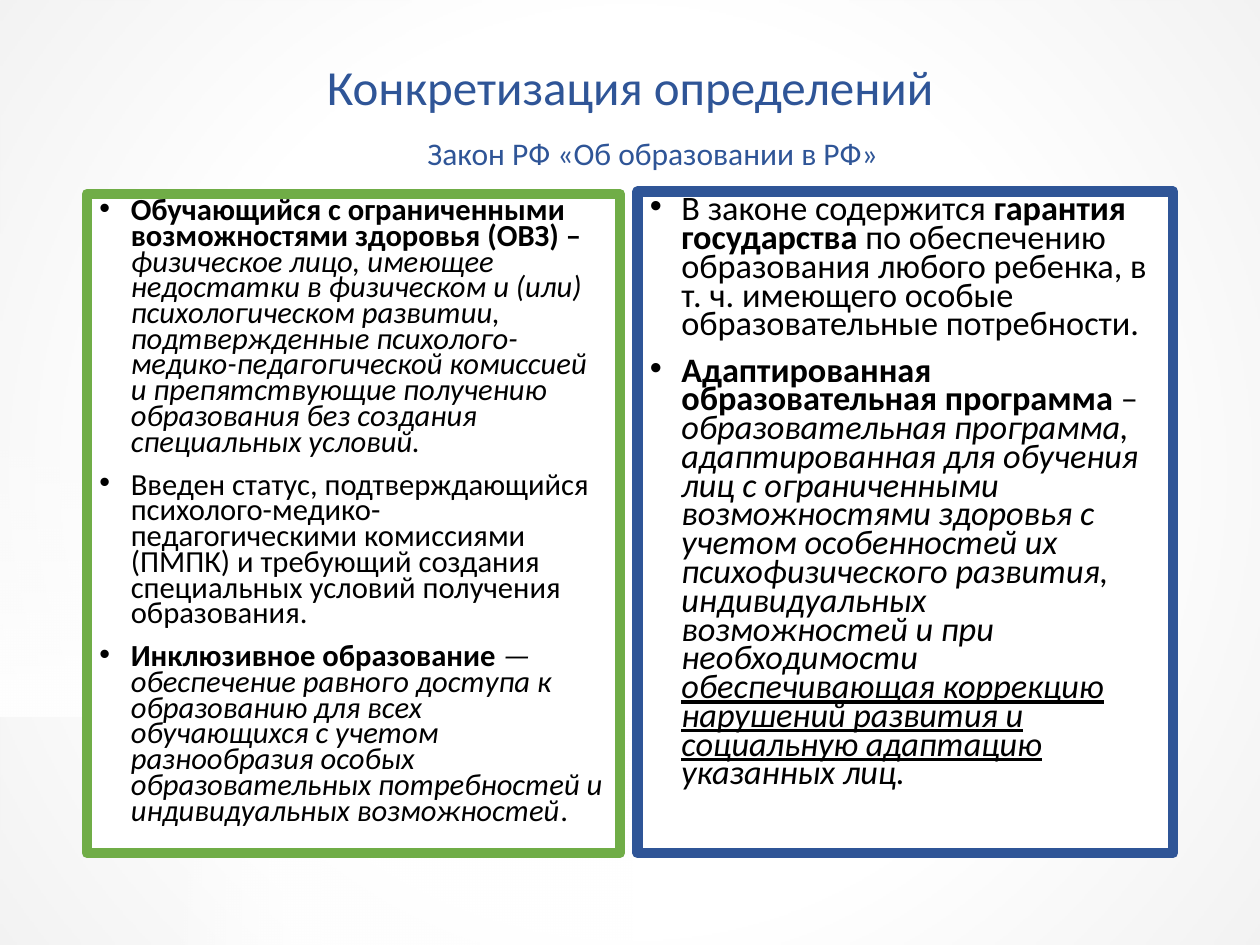
import pptx
import pptx.dml.color
import pptx.enum.shapes
import pptx.enum.text
import pptx.oxml
import pptx.oxml.ns
import pptx.util
from pptx.util import Inches

COLORS = {"white": "FFFFFF", "edge": "F2F2F2", "blue": "2F5597",
          "green": "70AD47", "text": "000000"}
FONT = "Calibri"


def rgb(name):
    return pptx.dml.color.RGBColor.from_string(COLORS[name])


class SlideBuilder:
    """Holds the text style and the current slide."""

    def __init__(self, slide):
        self.slide = slide

    def rectangle(self, left, top, width, height):
        shape = self.slide.shapes.add_shape(
            pptx.enum.shapes.MSO_SHAPE.RECTANGLE,
            Inches(left), Inches(top), Inches(width), Inches(height))
        shape.shadow.inherit = False
        return shape

    def gradient(self, box, stops, direction, rotation=0):
        """Rectangle with a gradient; a stop is (position, colour, opacity)."""
        shape = self.rectangle(*box)
        shape.rotation = rotation
        shape.line.fill.background()
        shape.fill.background()
        stop_xml = "".join(
            f'<a:gs pos="{position * 1000}"><a:srgbClr val="{COLORS[color]}">'
            f'<a:alpha val="{opacity * 1000}"/></a:srgbClr></a:gs>'
            for position, color, opacity in stops)
        fill = pptx.oxml.parse_xml(
            f'<a:gradFill {pptx.oxml.ns.nsdecls("a")} rotWithShape="1">'
            f'<a:gsLst>{stop_xml}</a:gsLst>{direction}</a:gradFill>')
        properties = shape.fill._xPr
        properties.replace(properties.find(pptx.oxml.ns.qn("a:noFill")), fill)

    def format_run(self, run, size, color, marks=""):
        font = run.font
        font.name = FONT
        font.size = pptx.util.Pt(size)
        font.color.rgb = rgb(color)
        font.bold = "b" in marks
        font.italic = "i" in marks
        font.underline = "u" in marks

    def heading(self, box, text, size, anchor):
        shape = self.slide.shapes.add_textbox(*map(Inches, box))
        frame = shape.text_frame
        frame.text = text
        frame.word_wrap = True
        frame.vertical_anchor = anchor
        paragraph = frame.paragraphs[0]
        paragraph.alignment = pptx.enum.text.PP_ALIGN.CENTER
        paragraph.line_spacing = 0.9
        self.format_run(paragraph.runs[0], size, "blue")

    def panel(self, box, border, size, items):
        """Framed bullet list; an item is a list of (text, marks)."""
        shape = self.rectangle(*box)
        shape.fill.solid()
        shape.fill.fore_color.rgb = rgb("white")
        shape.line.color.rgb = rgb(border)
        shape.line.width = pptx.util.Pt(6)
        frame = shape.text_frame
        frame.word_wrap = True
        frame.vertical_anchor = pptx.enum.text.MSO_ANCHOR.TOP
        for index, item in enumerate(items):
            paragraph = frame.add_paragraph() if index else frame.paragraphs[0]
            self.bullet(paragraph)
            paragraph.alignment = pptx.enum.text.PP_ALIGN.LEFT
            paragraph.line_spacing = 0.7
            paragraph.space_before = pptx.util.Pt(10 if index else 0)
            for text, marks in item:
                run = paragraph.add_run()
                run.text = text
                self.format_run(run, size, "text", marks)

    def bullet(self, paragraph):
        properties = paragraph._p.get_or_add_pPr()
        properties.set("marL", str(Inches(0.25)))
        properties.set("indent", str(-Inches(0.25)))
        for xml in ('<a:buFont {} typeface="Arial"/>', '<a:buChar {} char="•"/>'):
            properties.append(pptx.oxml.parse_xml(
                xml.format(pptx.oxml.ns.nsdecls("a"))))


DEFINITIONS = [
    [("Обучающийся с ограниченными возможностями здоровья (ОВЗ) – ", "b"),
     ("физическое лицо, имеющее недостатки в физическом и (или) "
      "психологическом развитии, подтвержденные "
      "психолого-медико-педагогической комиссией и препятствующие "
      "получению образования без создания специальных условий.", "i")],
    [("Введен статус, подтверждающийся психолого-медико-педагогическими "
      "комиссиями (ПМПК) и требующий создания специальных условий "
      "получения образования.", "")],
    [("Инклюзивное образование", "b"),
     (" — обеспечение равного доступа к образованию для всех обучающихся "
      "с учетом разнообразия особых образовательных потребностей и "
      "индивидуальных возможностей", "i"),
     (".", "")],
]
GUARANTEES = [
    [("В законе содержится ", ""),
     ("гарантия государства", "b"),
     (" по обеспечению образования любого ребенка, в т. ч. имеющего "
      "особые образовательные потребности.", "")],
    [("Адаптированная образовательная программа", "b"),
     (" – ", ""),
     ("образовательная программа, адаптированная для обучения лиц с "
      "ограниченными возможностями здоровья с учетом особенностей их "
      "психофизического развития, индивидуальных возможностей и при "
      "необходимости ", "i"),
     ("обеспечивающая коррекцию нарушений развития и социальную "
      "адаптацию", "iu"),
     (" указанных лиц.", "i")],
]


def main():
    presentation = pptx.Presentation()
    presentation.slide_width = Inches(10)
    presentation.slide_height = Inches(7.5)
    slide = presentation.slides.add_slide(presentation.slide_layouts[6])
    builder = SlideBuilder(slide)

    # Background: grey towards the corners, with white fades at lower left
    builder.gradient(
        (0, 0, 10, 7.5),
        [(0, "white", 0), (58, "white", 100), (100, "edge", 100)],
        '<a:path path="circle"><a:fillToRect l="50000" t="50000" '
        'r="50000" b="50000"/></a:path>')
    for box, rotation in (((1.28, 5.69, 1.28, 1.81), 0),
                          ((-0.33, 3.55, 2.47, 1.81), 90),
                          ((2.56, 5.69, 2.47, 1.81), 180)):
        builder.gradient(box, [(0, "white", 100), (100, "white", 0)],
                         '<a:lin ang="10800000" scaled="0"/>', rotation)

    # Title and subtitle
    anchors = pptx.enum.text.MSO_ANCHOR
    builder.heading((0.69, 0.4, 8.62, 0.63), "Конкретизация определений",
                    28, anchors.MIDDLE)
    builder.heading((0.88, 1.02, 8.66, 0.4), "Закон РФ «Об образовании в РФ» ",
                    18, anchors.BOTTOM)

    # Two framed lists
    builder.panel((0.69, 1.54, 4.23, 5.23), "green", 17.5, DEFINITIONS)
    builder.panel((5.06, 1.52, 4.25, 5.25), "blue", 19.6, GUARANTEES)

    presentation.save("out.pptx")


if __name__ == "__main__":
    main()
